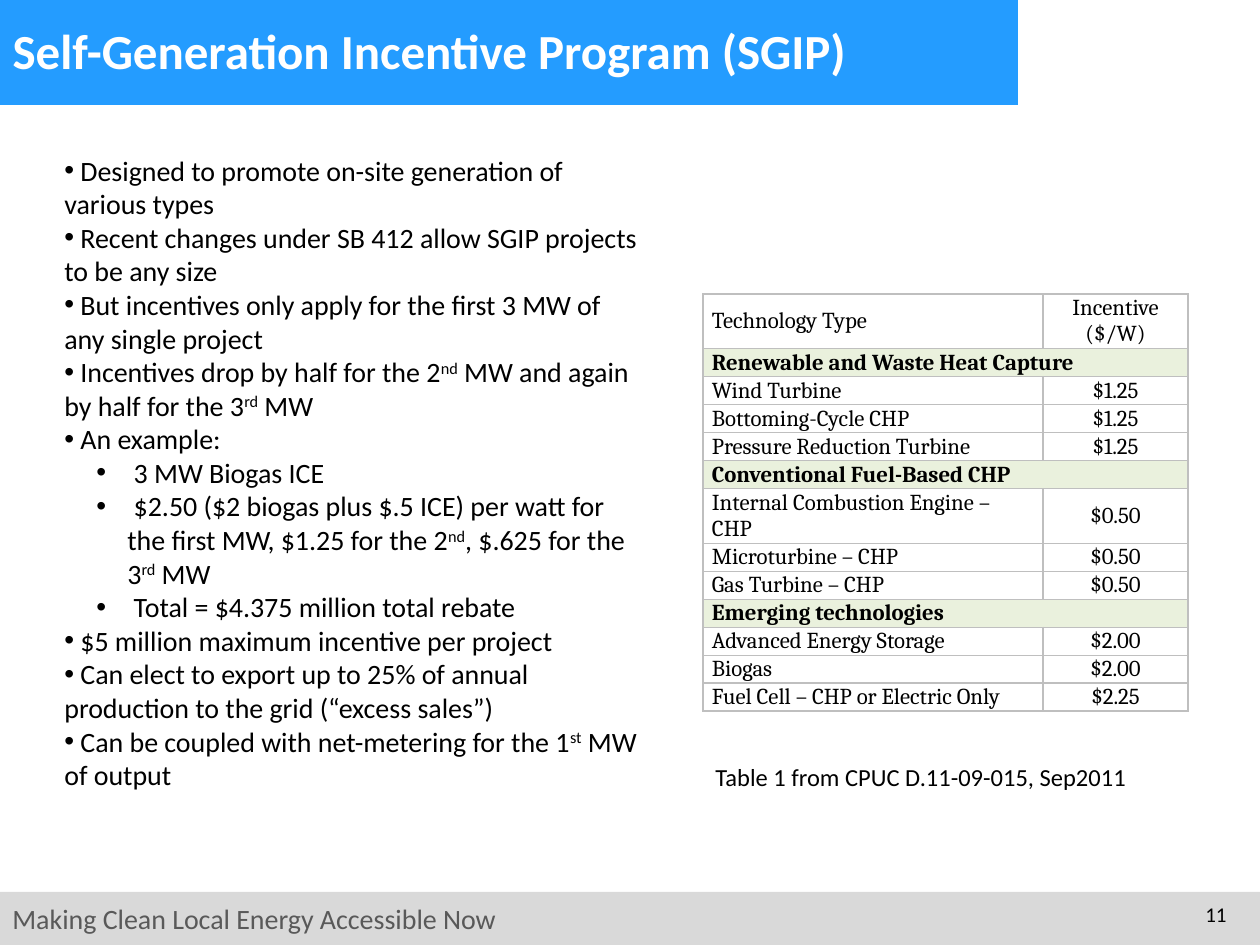
from lxml.etree import SubElement
from pptx import Presentation
from pptx.dml.color import RGBColor
from pptx.enum.shapes import MSO_SHAPE
from pptx.enum.text import MSO_ANCHOR, MSO_AUTO_SIZE, PP_ALIGN
from pptx.oxml import parse_xml
from pptx.oxml.ns import nsdecls, qn
from pptx.util import Emu, Pt

SCALE = 914400 / 126
BLACK, WHITE = "000000", "FFFFFF"


def px(*lengths):
    return [Emu(round(length * SCALE)) for length in lengths]


def style(para, size, colour=BLACK, name="Calibri", bold=False, align=PP_ALIGN.LEFT):
    para.alignment = align
    para.font.size = Pt(size)
    para.font.name = name
    para.font.bold = bold
    para.font.color.rgb = RGBColor.from_string(colour)


deck = Presentation()
deck.slide_width, deck.slide_height = px(1260, 945)
page = deck.slides.add_slide(deck.slide_layouts[5])

# Title on its blue band, and the grey footer band
title = page.shapes.title
for area, colour in [((0, 892, 1260, 53), "D9D9D9"), ((0, 0, 1018, 105), "249CFF")]:
    band = page.shapes.add_shape(MSO_SHAPE.RECTANGLE, *px(*area))
    band.shadow.inherit = False
    band.fill.solid()
    band.fill.fore_color.rgb = RGBColor.from_string(colour)
    band.line.fill.background()
    title._element.addprevious(band._element)

title.left, title.top, title.width, title.height = px(0, 14, 998, 72)
title.text_frame.text = "Self-Generation Incentive Program (SGIP)"
title.text_frame.auto_size = MSO_AUTO_SIZE.NONE
title.text_frame.vertical_anchor = MSO_ANCHOR.MIDDLE
style(title.text_frame.paragraphs[0], 28, WHITE, bold=True)

# Footer, page number and table caption
labels = [
    ("Making Clean Local Energy Accessible Now", (0, 895, 651, 47), 16, "595959", PP_ALIGN.LEFT),
    ("11", (1176, 895, 63, 50), 12, BLACK, PP_ALIGN.RIGHT),
    ("Table 1 from CPUC D.11-09-015, Sep2011", (703, 756, 490, 43), 14, BLACK, PP_ALIGN.LEFT),
]
for text, area, size, colour, align in labels:
    box = page.shapes.add_textbox(*px(*area))
    box.text_frame.word_wrap = True
    box.text_frame.text = text
    style(box.text_frame.paragraphs[0], size, colour, align=align)

# Bullet list: (level, text), with superscripts between carets
bullets = [
    (0, "Designed to promote on-site generation of various types"),
    (0, "Recent changes under SB 412 allow SGIP projects to be any size"),
    (0, "But incentives only apply for the first 3 MW of any single project"),
    (0, "Incentives drop by half for the 2^nd^ MW and again by half for the 3^rd^ MW"),
    (0, "An example:"),
    (1, "3 MW Biogas ICE"),
    (1, "$2.50 ($2 biogas plus $.5 ICE) per watt for the first MW, "
        "$1.25 for the 2^nd^, $.625 for the 3^rd^ MW"),
    (1, "Total = $4.375 million total rebate"),
    (0, "$5 million maximum incentive per project"),
    (0, "Can elect to export up to 25% of annual production to the grid (“excess sales”)"),
    (0, "Can be coupled with net-metering for the 1^st^ MW of output"),
]
box = page.shapes.add_textbox(*px(52, 147, 599, 674))
frame = box.text_frame
frame.word_wrap = True
for index, (level, text) in enumerate(bullets):
    para = frame.paragraphs[0] if index == 0 else frame.add_paragraph()
    para.level = level
    margin, indent = px(63 * level, -31 * level)
    settings = para._p.get_or_add_pPr()
    settings.set("marL", str(margin))
    settings.set("indent", str(indent))
    SubElement(settings, qn("a:buFont")).set("typeface", "Arial")
    SubElement(settings, qn("a:buChar")).set("char", "•")
    for part, words in enumerate((" " + text).split("^")):
        span = para.add_run()
        span.text = words
        if part % 2:
            span._r.get_or_add_rPr().set("baseline", "30000")
    style(para, 16)

# Incentive table: a row without a value is a section heading
rows = [
    ("Technology Type", "Incentive ($/W)"),
    ("Renewable and Waste Heat Capture", None),
    ("Wind Turbine", "$1.25"),
    ("Bottoming-Cycle CHP", "$1.25"),
    ("Pressure Reduction Turbine", "$1.25"),
    ("Conventional Fuel-Based CHP", None),
    ("Internal Combustion Engine – CHP", "$0.50"),
    ("Microturbine – CHP", "$0.50"),
    ("Gas Turbine – CHP", "$0.50"),
    ("Emerging technologies", None),
    ("Advanced Energy Storage", "$2.00"),
    ("Biogas", "$2.00"),
    ("Fuel Cell – CHP or Electric Only", "$2.25"),
]
two_line_rows = (0, 6)
table = page.shapes.add_table(len(rows), 2, *px(703, 294, 485, 414)).table
table.first_row = table.horz_banding = False
table.columns[0].width, table.columns[1].width = px(340, 145)
for row, values in enumerate(rows):
    table.rows[row].height = px(53 if row in two_line_rows else 28)[0]
    heading = values[1] is None
    if heading:
        table.cell(row, 0).merge(table.cell(row, 1))
    for column, text in enumerate(values):
        cell = table.cell(row, column)
        cell.margin_left, cell.margin_right, cell.margin_top, cell.margin_bottom = px(9, 9, 0, 0)
        cell.vertical_anchor = MSO_ANCHOR.MIDDLE
        cell.text = text or ""
        style(cell.text_frame.paragraphs[0], 13, name="Cambria", bold=heading,
              align=PP_ALIGN.CENTER if column else PP_ALIGN.LEFT)
        for side in ("lnL", "lnR", "lnT", "lnB"):
            cell._tc.get_or_add_tcPr().append(parse_xml(
                f'<a:{side} {nsdecls("a")} w="12700"><a:solidFill>'
                f'<a:srgbClr val="BFBFBF"/></a:solidFill></a:{side}>'))
        cell.fill.solid()
        cell.fill.fore_color.rgb = RGBColor.from_string("EAF1DD" if heading else WHITE)

deck.save("out.pptx")
